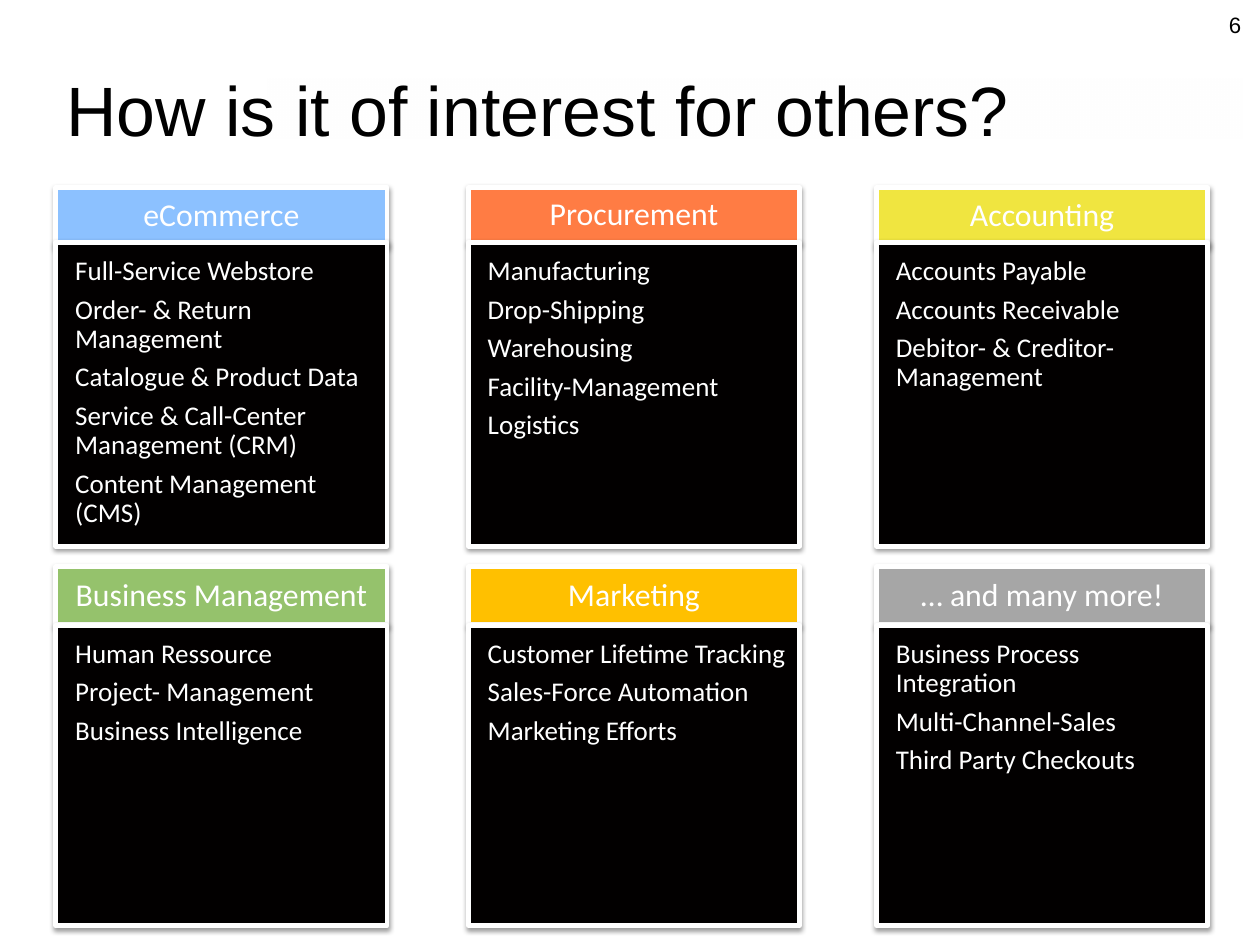
import pptx
import pptx.util
import pptx.dml.color
import pptx.enum.shapes
import pptx.enum.text
import pptx.oxml
import pptx.oxml.ns

Pt = pptx.util.Pt
ALIGN = pptx.enum.text.PP_ALIGN
ANCHOR = pptx.enum.text.MSO_ANCHOR

TITLE = "How is it of interest for others?"
PAGE = "6"
AREAS = [
    ("eCommerce", "8CC1FF", [
        "Full-Service Webstore", "Order- & Return Management",
        "Catalogue & Product Data", "Service & Call-Center Management (CRM)",
        "Content Management (CMS)"]),
    ("Procurement", "FF7C44", [
        "Manufacturing", "Drop-Shipping", "Warehousing",
        "Facility-Management", "Logistics"]),
    ("Accounting", "F0E540", [
        "Accounts Payable", "Accounts Receivable",
        "Debitor- & Creditor-Management"]),
    ("Business Management", "95C26C", [
        "Human Ressource", "Project- Management", "Business Intelligence"]),
    ("Marketing", "FFC000", [
        "Customer Lifetime Tracking", "Sales-Force Automation",
        "Marketing Efforts"]),
    ("… and many more!", "A6A6A6", [
        "Business Process Integration", "Multi-Channel-Sales",
        "Third Party Checkouts"]),
]

SLIDE_SIZE = (793.75, 595.25)
COLUMNS = [35.2, 295.1, 552.2]
ROWS = [
    {"head": 118.1, "body": 152.6, "depth": 191.5},
    {"head": 357, "body": 393.8, "depth": 189.3},
]
CARD_WIDTH = 208.7
HEAD_HEIGHT = 36.6
HEAD_HEIGHTS = {"Procurement": 34.6}
AFTER = 0.35
TITLE_STOPS = [(0.17, 0), (0.34, 70000)]

SHADOW = (
    f'<a:effectLst {pptx.oxml.ns.nsdecls("a")}>'
    f'<a:outerShdw blurRad="{Pt(3.1)}" dist="{Pt(1.6)}" dir="5400000" rotWithShape="0">'
    '<a:srgbClr val="000000"><a:alpha val="38000"/></a:srgbClr>'
    '</a:outerShdw></a:effectLst>'
)


def color(hex_code):
    return pptx.dml.color.RGBColor.from_string(hex_code)


def write(text, shape, size, font="Calibri", ink="FFFFFF", align=ALIGN.LEFT,
          anchor=ANCHOR.TOP, insets=(0, 0, 0, 0), line_spacing=1.0, after=0):
    frame = shape.text_frame
    frame.word_wrap = True
    frame.vertical_anchor = anchor
    (frame.margin_left, frame.margin_top,
     frame.margin_right, frame.margin_bottom) = map(Pt, insets)
    frame.text = text
    for paragraph in frame.paragraphs:
        paragraph.alignment = align
        paragraph.line_spacing = line_spacing
        paragraph.space_after = Pt(size * after)
        paragraph.font.size = Pt(size)
        paragraph.font.name = font
        paragraph.font.color.rgb = color(ink)


def add_box(slide, left, top, width, height):
    return slide.shapes.add_shape(
        pptx.enum.shapes.MSO_SHAPE.RECTANGLE,
        Pt(left), Pt(top), Pt(width), Pt(height))


def add_panel(slide, left, top, height, fill):
    panel = add_box(slide, left, top, CARD_WIDTH, height)
    panel.fill.solid()
    panel.fill.fore_color.rgb = color(fill)
    panel.line.color.rgb = color("FFFFFF")
    panel.line.width = Pt(3)
    panel._element.spPr.append(pptx.oxml.parse_xml(SHADOW))
    return panel


def add_title(slide):
    title = add_box(slide, 41.8, 49.6, 740.9, 37.4)
    title.shadow.inherit = False
    title.line.fill.background()
    title.fill.gradient()
    title.fill.gradient_angle = 0
    for stop, (position, alpha) in zip(title.fill.gradient_stops, TITLE_STOPS):
        stop.position = position
        stop.color.rgb = color("FFFFFF")
    tints = title._element.spPr.findall(".//" + pptx.oxml.ns.qn("a:srgbClr"))
    for tint, (position, alpha) in zip(tints, TITLE_STOPS):
        tint.append(pptx.oxml.parse_xml(
            f'<a:alpha {pptx.oxml.ns.nsdecls("a")} val="{alpha}"/>'))
    write(TITLE, title, size=44, font="Arial", ink="000000",
          anchor=ANCHOR.MIDDLE, insets=(0, 0, 40.3, 0))


def main():
    deck = pptx.Presentation()
    deck.slide_width, deck.slide_height = map(Pt, SLIDE_SIZE)
    slide = deck.slides.add_slide(deck.slide_layouts[6])

    cards = [(COLUMNS[i % 3], ROWS[i // 3], *area) for i, area in enumerate(AREAS)]
    for left, row, heading, fill, _ in cards:
        height = HEAD_HEIGHTS.get(heading, HEAD_HEIGHT)
        write(heading, add_panel(slide, left, row["head"], height, fill), size=20,
              align=ALIGN.CENTER, anchor=ANCHOR.MIDDLE, insets=(1.4, 1.4, 1.4, 1.4),
              line_spacing=0.9, after=AFTER)
    for left, row, _, _, topics in cards:
        body = add_panel(slide, left, row["body"], row["depth"], "020000")
        write("\n".join(topics), body, size=17, insets=(12.2, 9.4, 1.4, 1.4),
              line_spacing=0.9, after=AFTER)

    page = slide.shapes.add_textbox(Pt(756.7), Pt(7.2), Pt(25.2), Pt(25.2))
    write(PAGE, page, size=14, font="Arial", ink="000000", align=ALIGN.RIGHT)
    add_title(slide)

    deck.save("out.pptx")


if __name__ == "__main__":
    main()
